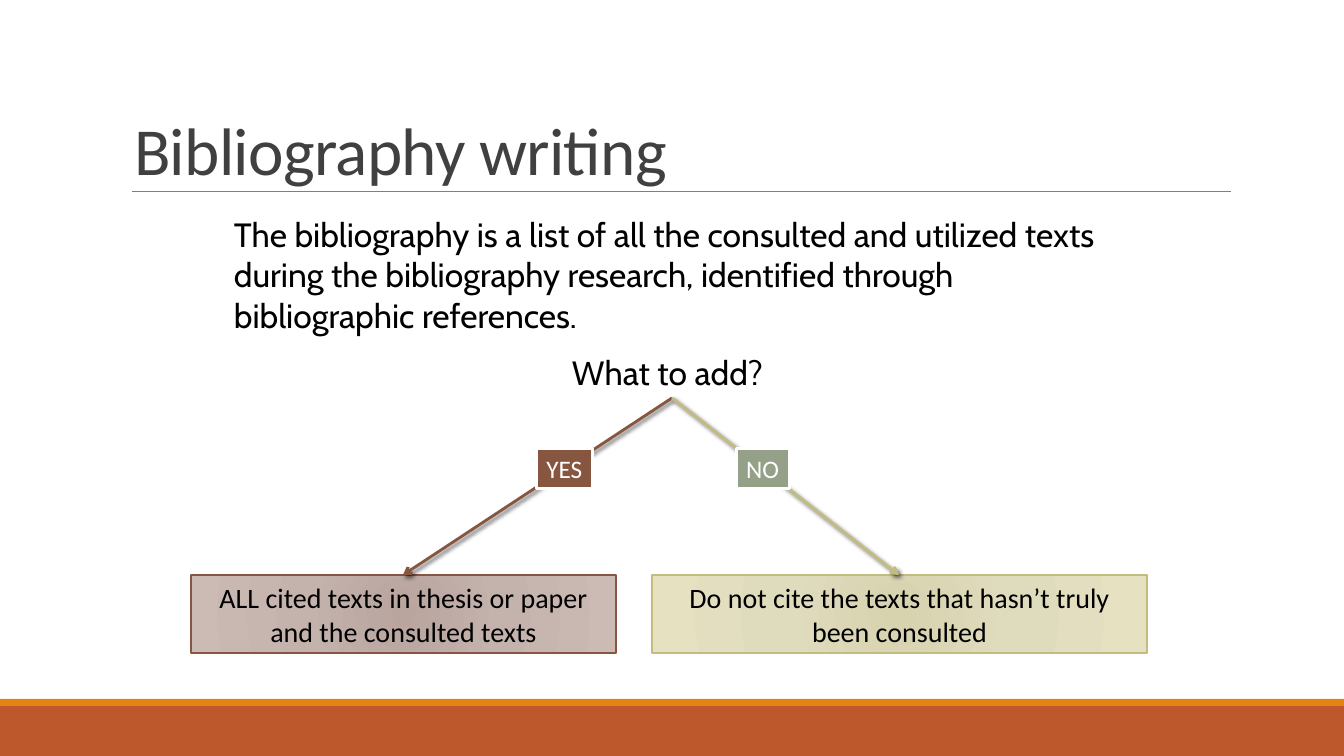
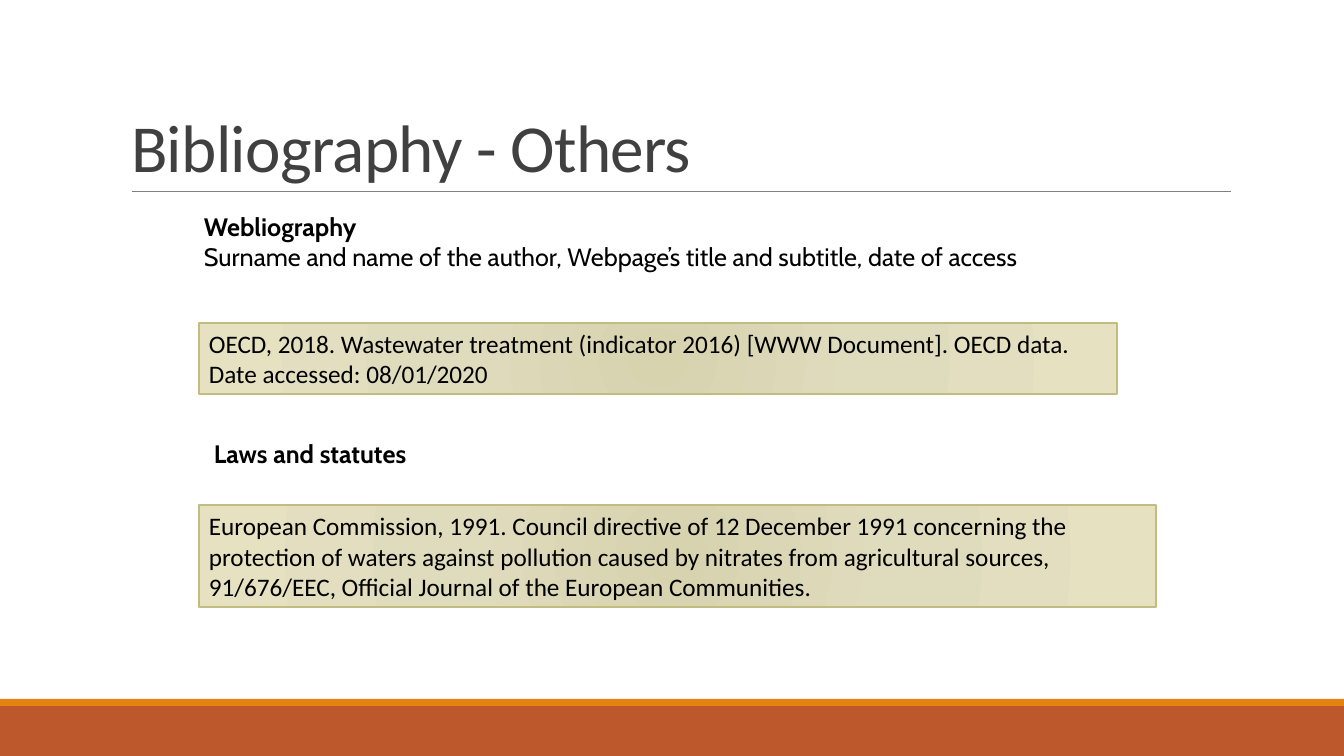
from lxml import etree
from pptx import Presentation
from pptx import util as u
from pptx.dml.color import RGBColor
from pptx.enum import shapes, text
from pptx.oxml import ns

SCALE = u.Inches(1) / 100.8
SLIDE_W, SLIDE_H = 1344, 756
TITLE_ONLY = 5
HEAD, BODY = "Cabin", "Calibri"
COLORS = {
    "band": "BD582C", "stripe": "E48312", "rule": "808080", "title": "404040",
    "ink": "000000", "paper": "FFFFFF",
    "brown": "865640", "sage": "94A088", "khaki": "C2BC80",
}
GRADIENTS = {
    "brown": ("B9A49E", "C4B2AD", "CCBAB5"),
    "khaki": ("D7D3AF", "DFDBBD", "E5E1C1"),
}
STOPS = (0, 45, 100)
A_NS = "http://schemas.openxmlformats.org/drawingml/2006/main"


def px(n):
    return u.Emu(round(n * SCALE))


def color(name):
    return RGBColor.from_string(COLORS[name])


def a_xml(body):
    """Parse a drawing element whose root start tag is followed by a space or '>'."""
    wrapped = etree.fromstring(f'<x xmlns:a="{A_NS}">{body}</x>')
    return wrapped[0]


def write(shape, paragraphs, size, font, ink="ink", align=text.PP_ALIGN.LEFT,
          wrap=True):
    """Fill a shape with paragraphs, each a list of (words, bold) runs."""
    tf = shape.text_frame
    tf.word_wrap = wrap
    tf.auto_size = text.MSO_AUTO_SIZE.SHAPE_TO_FIT_TEXT
    for i, runs in enumerate(paragraphs):
        p = tf.add_paragraph() if i else tf.paragraphs[0]
        p.alignment = align
        for words, bold in runs:
            r = p.add_run()
            r.text = words
            r.font.name, r.font.size, r.font.bold = font, u.Pt(size), bold
            r.font.color.rgb = color(ink)


def add_text(s, box, paragraphs, size, wrap=True):
    tb = s.shapes.add_textbox(*map(px, box))
    write(tb, paragraphs, size, HEAD, wrap=wrap)


def add_rect(s, box, fill, line=None, width=1):
    sp = s.shapes.add_shape(shapes.MSO_SHAPE.RECTANGLE, *map(px, box))
    sp.shadow.inherit = False
    sp.fill.solid()
    sp.fill.fore_color.rgb = color(fill)
    if line:
        sp.line.color.rgb = color(line)
        sp.line.width = u.Pt(width)
    else:
        sp.line.fill.background()
    return sp


def add_panel(s, box, tone, words, size, align=text.PP_ALIGN.LEFT):
    """Outlined box with a radial gradient and one paragraph."""
    sp = add_rect(s, box, tone, tone)
    stops = "".join(
        f'<a:gs pos="{pos * 1000}"><a:srgbClr val="{rgb}"/></a:gs>'
        for pos, rgb in zip(STOPS, GRADIENTS[tone]))
    edge = "100000"
    gradient = a_xml(
        f'<a:gradFill rotWithShape="1"><a:gsLst>{stops}</a:gsLst>'
        f'<a:path path="circle"><a:fillToRect l="{edge}" t="{edge}" '
        f'r="{edge}" b="{edge}"/></a:path></a:gradFill>')
    props = sp.element.spPr
    props.replace(props.find(ns.qn("a:solidFill")), gradient)
    write(sp, [[(words, False)]], size, BODY, align=align)


def add_line(s, start, end, tone, width, arrow=False):
    """Straight line; an arrow also gets a head and a soft shadow."""
    c = s.shapes.add_connector(shapes.MSO_CONNECTOR.STRAIGHT,
                               *map(px, (*start, *end)))
    c.line.color.rgb = color(tone)
    c.line.width = u.Pt(width)
    props = c.element.spPr
    shadow = ""
    if arrow:
        props.find(ns.qn("a:ln")).append(a_xml('<a:tailEnd type="arrow"/>'))
        shadow = (f'<a:outerShdw blurRad="{u.Pt(3)}" dist="{u.Pt(2)}" '
                  f'dir="2700000"><a:srgbClr val="{COLORS["ink"]}">'
                  '<a:alpha val="60000"/></a:srgbClr></a:outerShdw>')
    props.append(a_xml(f"<a:effectLst>{shadow}</a:effectLst>"))


def place_title(s, box, words):
    title = s.shapes.title
    title.left, title.top, title.width, title.height = map(px, box)
    write(title, [[(words, False)]], 48, BODY, "title")
    tf = title.text_frame
    tf.auto_size = text.MSO_AUTO_SIZE.NONE
    tf.vertical_anchor = text.MSO_ANCHOR.BOTTOM
    tf.paragraphs[0].line_spacing = 0.85
    for props in title.element.iter(ns.qn("a:rPr")):
        props.set("spc", "-50")


def new_slide(prs, title_box, title):
    s = prs.slides.add_slide(prs.slide_layouts[TITLE_ONLY])
    add_rect(s, (0, 706, SLIDE_W, 50), "band")
    add_rect(s, (0, 699, SLIDE_W, 7), "stripe")
    add_line(s, (132, 191), (1231, 191), "rule", 0.5)
    place_title(s, title_box, title)
    return s


def decision_tree(s, box, question, branches):
    """Question on top, one arrow down to each answer, a label on each arrow."""
    x, y, w, h = box
    question_w, question_h, label_h, answer_h = 220, 51, 40, 78
    apex_x, apex_y = SLIDE_W // 2, y + question_h
    answer_y = y + h - answer_h
    add_text(s, (apex_x - question_w // 2, y, question_w, question_h),
             [[(question, False)]], 24, wrap=False)
    labels = []
    for side, (label, label_w, fill, tone, answer_w, answer) in enumerate(branches):
        answer_x = x + side * (w - answer_w)
        target_x = answer_x + answer_w // 2
        add_panel(s, (answer_x, answer_y, answer_w, answer_h), tone, answer,
                  20, text.PP_ALIGN.CENTER)
        add_line(s, (apex_x, apex_y), (target_x, answer_y), tone, 2, arrow=True)
        mid_x = apex_x + 0.4 * (target_x - apex_x)
        mid_y = apex_y + 0.4 * (answer_y - apex_y)
        labels.append((label, fill, (mid_x - label_w / 2, mid_y - label_h / 2,
                                     label_w, label_h)))
    for label, fill, label_box in labels:
        sp = add_rect(s, label_box, fill, "paper", 2)
        write(sp, [[(label, False)]], 18, BODY, "paper", wrap=False)


def source_entry(s, box, heading, paragraphs, example_h, example):
    """Heading (indent, width, height) at the top, example panel at the bottom."""
    x, y, w, h = box
    indent, heading_w, heading_h = heading
    add_text(s, (x + indent, y, heading_w, heading_h), paragraphs, 18)
    add_panel(s, (x, y + h - example_h, w, example_h), "khaki", example, 18)


def writing_slide(prs):
    s = new_slide(prs, (124, 32, 978, 162), "Bibliography writing")
    add_text(s, (224, 209, 925, 132), [[(
        "The bibliography is a list of all the consulted and utilized texts "
        "during the bibliography research, identified through bibliographic "
        "references.", False)]], 24)
    decision_tree(s, (191, 347, 956, 306), "What to add?", [
        ("YES", 56, "brown", "brown", 425,
         "ALL cited texts in thesis or paper and the consulted texts"),
        ("NO", 53, "sage", "khaki", 495,
         "Do not cite the texts that hasn’t truly been consulted"),
    ])


def others_slide(prs):
    s = new_slide(prs, (121, 31, 1109, 160), "Bibliography - Others")
    source_entry(s, (199, 206, 918, 188), (-5, 965, 71), [
        [("Webliography", True)],
        [("Surname and name of the author, Webpage’s title and subtitle, "
          "date of access", False)],
    ], 71, "OECD, 2018. Wastewater treatment (indicator 2016) [WWW Document]. "
           "OECD data. Date accessed: 08/01/2020")
    source_entry(s, (199, 433, 957, 174), (5, 889, 40),
                 [[("Laws and statutes", True)]], 102,
                 "European Commission, 1991. Council directive of 12 December "
                 "1991 concerning the protection of waters against pollution "
                 "caused by nitrates from agricultural sources, 91/676/EEC, "
                 "Official Journal of the European Communities.")


def main():
    prs = Presentation()
    prs.slide_width, prs.slide_height = px(SLIDE_W), px(SLIDE_H)
    writing_slide(prs)
    others_slide(prs)
    prs.save("out.pptx")


if __name__ == "__main__":
    main()
